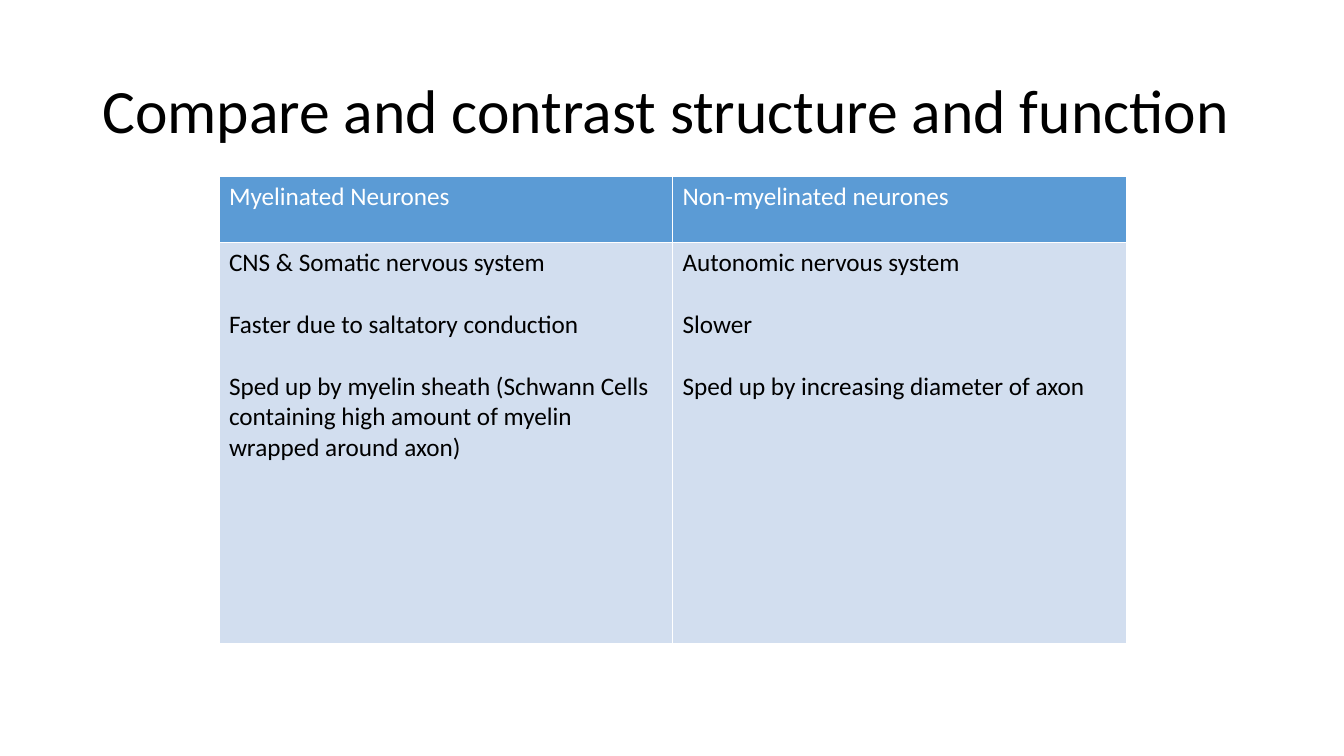
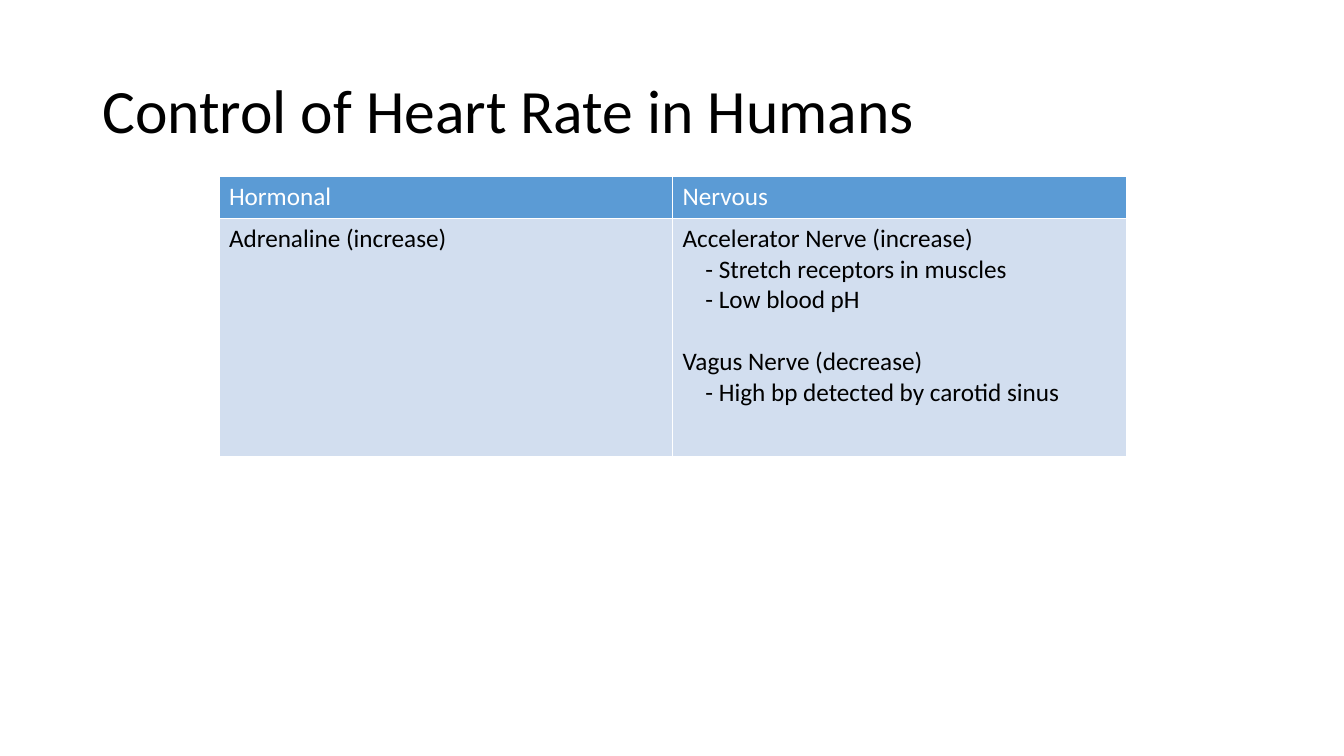
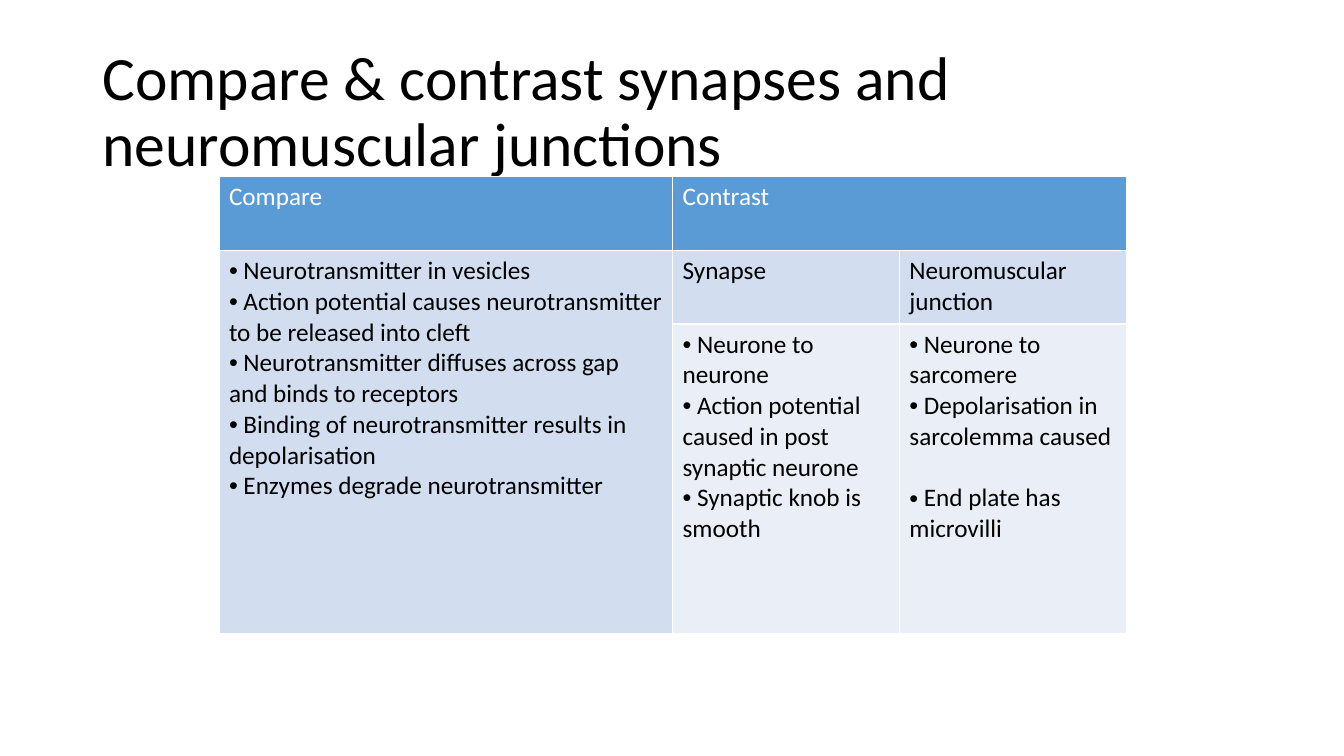
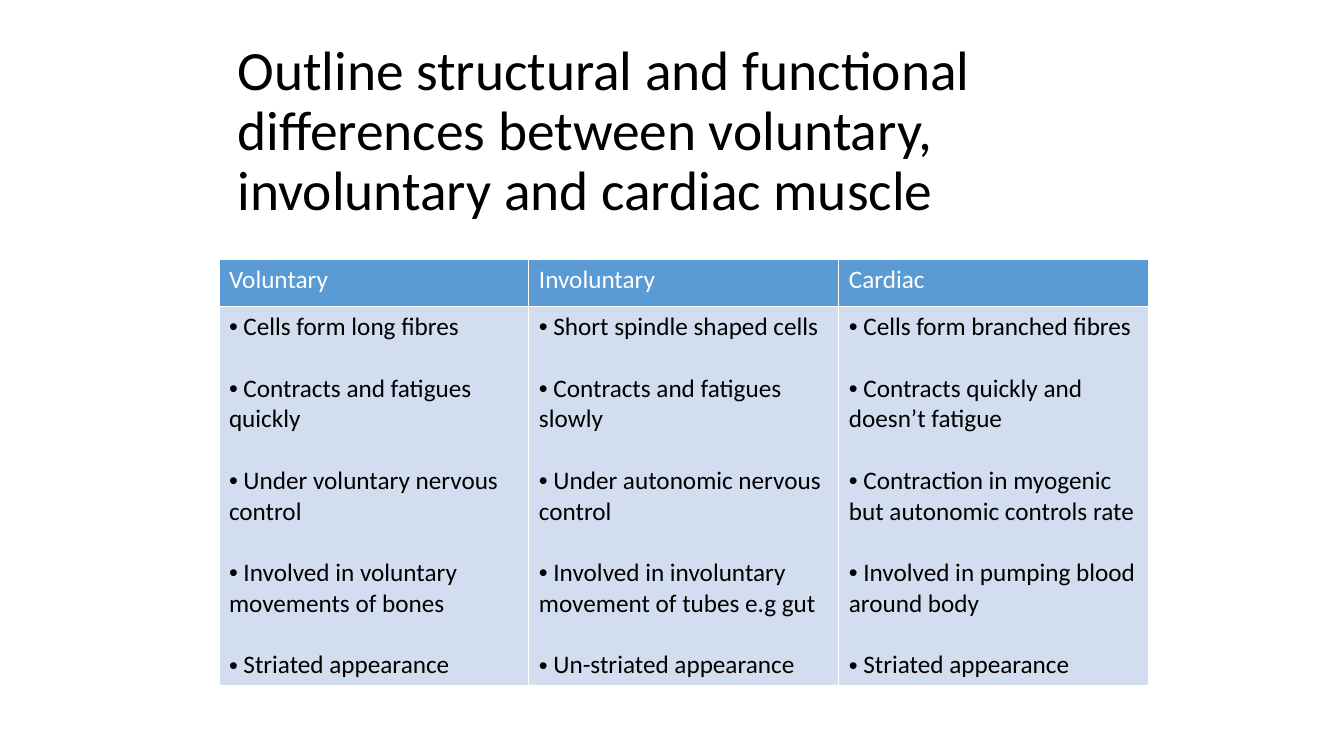
from dataclasses import dataclass

from lxml.etree import SubElement
from pptx import Presentation
from pptx.dml.color import RGBColor
from pptx.enum.text import MSO_ANCHOR
from pptx.oxml.ns import qn
from pptx.util import Pt

# Shared style
FONT = "Calibri"
BLACK = RGBColor(0x00, 0x00, 0x00)
WHITE = RGBColor(0xFF, 0xFF, 0xFF)
HEADER_BLUE = RGBColor(0x5B, 0x9B, 0xD5)
BAND_BLUE = RGBColor(0xD2, 0xDE, 0xEF)
PALE_BLUE = RGBColor(0xEA, 0xEF, 0xF7)
ROW_FILLS = (HEADER_BLUE, BAND_BLUE, PALE_BLUE)
BODY_SIZE = 18
LINE_GAP = 22
SUB_INDENT = 16.3
TABLE_LEFT = 156.4
HALF = 324


@dataclass(frozen=True)
class Line:
    text: str
    bullet: bool = False
    indent: float = 0
    before: float = 0


@dataclass(frozen=True)
class Frame:
    left: float
    top: float
    width: float
    height: float


@dataclass(frozen=True)
class Comparison:
    title: str
    columns: tuple[float, ...]
    heights: tuple[float, ...]
    rows: tuple[tuple[list[Line], ...], ...]
    merges: tuple[tuple[int, int, int, int], ...] = ()
    table_top: float = 126
    title_frame: Frame = Frame(66, 29, 828, 104.4)
    title_size: float = 44


def lines(*texts: str, gap: float = 0, bullet: bool = False) -> list[Line]:
    return [Line(text, bullet, before=gap if index else 0)
            for index, text in enumerate(texts)]


def bullets(*texts: str, gap: float = 0) -> list[Line]:
    return lines(*texts, gap=gap, bullet=True)


def headings(*texts: str) -> tuple[list[Line], ...]:
    return tuple(lines(text) for text in texts)


# Content
COMPARISONS = (
    Comparison(
        "Compare and contrast structure and function",
        (HALF, HALF), (47.5, 286.5),
        (headings("Myelinated Neurones", "Non-myelinated neurones"),
         (lines("CNS & Somatic nervous system",
                "Faster due to saltatory conduction",
                "Sped up by myelin sheath (Schwann Cells containing high "
                "amount of myelin wrapped around axon)", gap=LINE_GAP),
          lines("Autonomic nervous system", "Slower",
                "Sped up by increasing diameter of axon", gap=LINE_GAP))),
    ),
    Comparison(
        "Control of Heart Rate in Humans",
        (HALF, HALF), (30, 170),
        (headings("Hormonal", "Nervous"),
         (lines("Adrenaline (increase)"),
          [Line("Accelerator Nerve (increase)"),
           Line("- Stretch receptors in muscles", indent=SUB_INDENT),
           Line("- Low blood pH", indent=SUB_INDENT),
           Line("Vagus Nerve (decrease)", before=LINE_GAP),
           Line("- High bp detected by carotid sinus", indent=SUB_INDENT)])),
    ),
    Comparison(
        "Compare & contrast synapses and neuromuscular junctions",
        (HALF, HALF / 2, HALF / 2), (53, 52.5, 221),
        ((*headings("Compare", "Contrast"), []),
         (bullets("Neurotransmitter in vesicles",
                  "Action potential causes neurotransmitter to be released into cleft",
                  "Neurotransmitter diffuses across gap and binds to receptors",
                  "Binding of neurotransmitter results in depolarisation",
                  "Enzymes degrade neurotransmitter"),
          *headings("Synapse", "Neuromuscular junction")),
         ([],
          bullets("Neurone to neurone",
                  "Action potential caused in post synaptic neurone",
                  "Synaptic knob is smooth"),
          [*bullets("Neurone to sarcomere", "Depolarisation in sarcolemma caused"),
           Line("End plate has microvilli", bullet=True, before=LINE_GAP)])),
        merges=((0, 1, 0, 2), (1, 0, 2, 0)),
    ),
    Comparison(
        "Outline structural and functional differences between voluntary, "
        "involuntary and cardiac muscle",
        (221.4,) * 3, (33.5, 271),
        (headings("Voluntary", "Involuntary", "Cardiac"),
         (bullets("Cells form long fibres", "Contracts and fatigues quickly",
                  "Under voluntary nervous control",
                  "Involved in voluntary movements of bones",
                  "Striated appearance", gap=LINE_GAP),
          bullets("Short spindle shaped cells", "Contracts and fatigues slowly",
                  "Under autonomic nervous control",
                  "Involved in involuntary movement of tubes e.g gut",
                  "Un-striated appearance", gap=LINE_GAP),
          bullets("Cells form branched fibres",
                  "Contracts quickly and doesn’t fatigue",
                  "Contraction in myogenic but autonomic controls rate",
                  "Involved in pumping blood around body",
                  "Striated appearance", gap=LINE_GAP))),
        table_top=185.4, title_frame=Frame(162.5, 21.8, 641.5, 146),
        title_size=39.6,
    ),
)


def write(para, text: str, *, size: float, color: RGBColor) -> None:
    span = para.add_run()
    span.text = text
    span.font.name = FONT
    span.font.size = Pt(size)
    span.font.bold = False
    span.font.color.rgb = color


def add_title(page, text: str, frame: Frame, *, size: float) -> None:
    box = page.shapes.add_textbox(Pt(frame.left), Pt(frame.top),
                                  Pt(frame.width), Pt(frame.height))
    box.text_frame.word_wrap = True
    box.text_frame.vertical_anchor = MSO_ANCHOR.MIDDLE
    para = box.text_frame.paragraphs[0]
    para.line_spacing = 0.9
    write(para, text, size=size, color=BLACK)


def add_borders(cell, *, width: float, color: RGBColor) -> None:
    properties = cell._tc.get_or_add_tcPr()
    for side in ("a:lnL", "a:lnR", "a:lnT", "a:lnB"):
        border = SubElement(properties, qn(side), w=str(Pt(width)))
        fill = SubElement(border, qn("a:solidFill"))
        SubElement(fill, qn("a:srgbClr"), val=str(color))


def fill_cell(cell, content: list[Line], *, color: RGBColor) -> None:
    for index, line in enumerate(content):
        frame = cell.text_frame
        para = frame.add_paragraph() if index else frame.paragraphs[0]
        if line.before:
            para.space_before = Pt(line.before)
        properties = para._p.get_or_add_pPr()
        properties.set("marL", str(Pt(line.indent)))
        properties.set("indent", "0")
        if line.bullet:
            SubElement(properties, qn("a:buFont"), typeface="Arial")
            SubElement(properties, qn("a:buChar"), char="•")
        text = f" {line.text}" if line.bullet else line.text
        write(para, text, size=BODY_SIZE, color=color)


def add_comparison_table(page, comparison: Comparison) -> None:
    columns, heights = comparison.columns, comparison.heights
    table = page.shapes.add_table(
        len(heights), len(columns), Pt(TABLE_LEFT), Pt(comparison.table_top),
        Pt(sum(columns)), Pt(sum(heights))).table
    table.horz_banding = False
    for column, width in zip(table.columns, columns):
        column.width = Pt(width)
    for row, height in zip(table.rows, heights):
        row.height = Pt(height)
    for top, left, bottom, right in comparison.merges:
        table.cell(top, left).merge(table.cell(bottom, right))
    for row_index, row in enumerate(comparison.rows):
        for column_index, content in enumerate(row):
            cell = table.cell(row_index, column_index)
            add_borders(cell, width=1, color=WHITE)
            if cell.is_spanned:
                continue
            cell.fill.solid()
            cell.fill.fore_color.rgb = ROW_FILLS[row_index]
            fill_cell(cell, content, color=BLACK if row_index else WHITE)


def main() -> None:
    deck = Presentation()
    deck.slide_width, deck.slide_height = Pt(960), Pt(540)
    for comparison in COMPARISONS:
        page = deck.slides.add_slide(deck.slide_layouts[6])
        add_title(page, comparison.title, comparison.title_frame,
                  size=comparison.title_size)
        add_comparison_table(page, comparison)
    deck.save("out.pptx")


if __name__ == "__main__":
    main()
